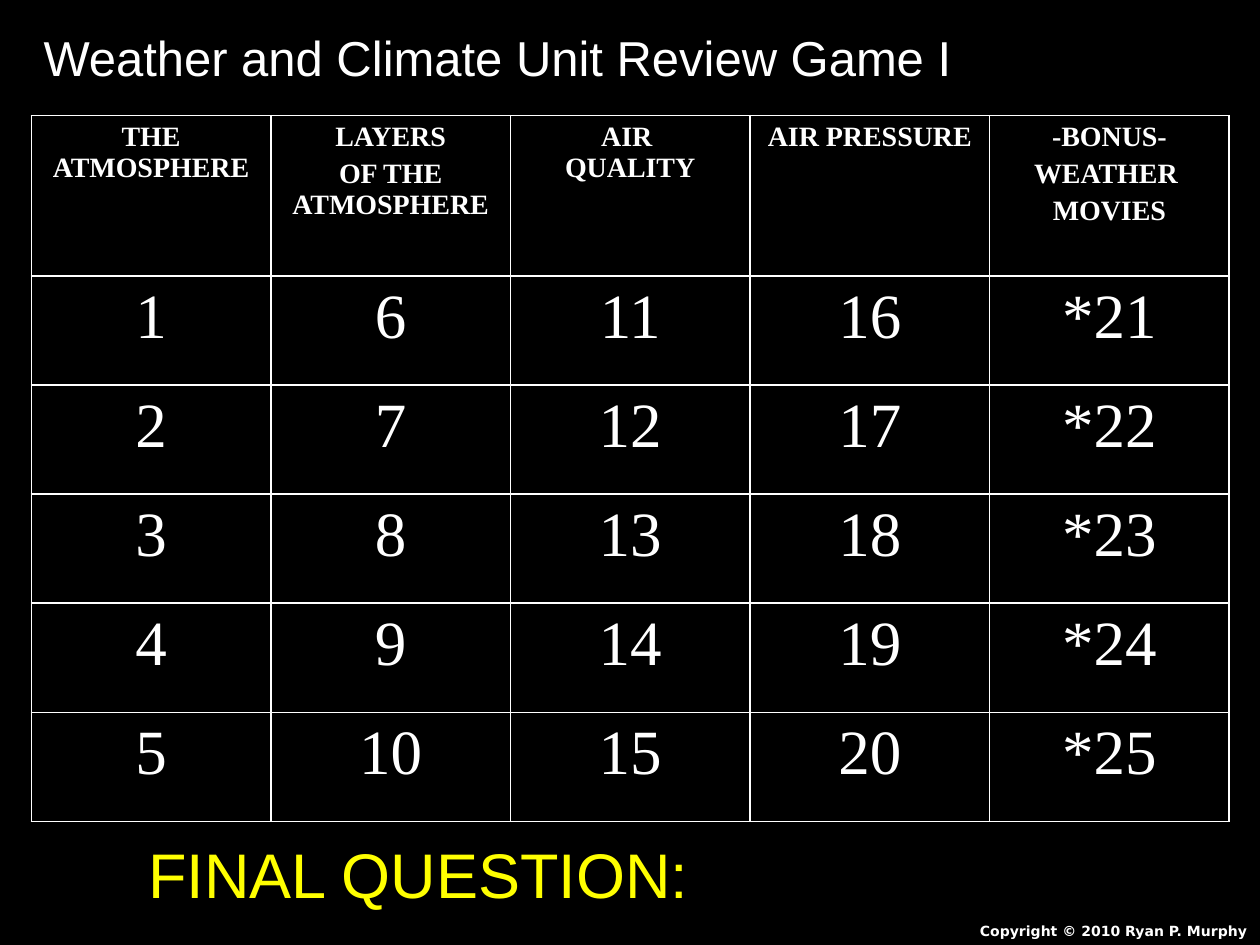
from lxml import etree
from pptx import Presentation
from pptx import util as u
from pptx.dml.color import RGBColor
from pptx.enum import text
from pptx.oxml.ns import qn

COLORS = {"black": "000000", "white": "FFFFFF", "yellow": "FFFF00"}
TOPICS = ["THE ATMOSPHERE", "LAYERS\nOF THE\vATMOSPHERE", "AIR \vQUALITY",
          "AIR PRESSURE", "-BONUS-\nWEATHER \nMOVIES"]
QUESTIONS = 5
BONUS = len(TOPICS) - 1


def rgb(name):
    return RGBColor.from_string(COLORS[name])


def style_text(tf, size, font, color="white", bold=False,
               align=text.PP_ALIGN.LEFT, before=0):
    for p in tf.paragraphs:
        p.alignment = align
        p.space_before = u.Pt(before)
        for r in p.runs:
            r.font.size = u.Pt(size)
            r.font.name = font
            r.font.bold = bold
            r.font.color.rgb = rgb(color)


def add_label(slide, words, left, top, width, height, size, font, **style):
    sp = slide.shapes.add_textbox(u.Cm(left), u.Cm(top), u.Cm(width), u.Cm(height))
    tf = sp.text_frame
    tf.word_wrap = True
    tf.text = words
    style_text(tf, size, font, **style)


def add_borders(cell):
    tc_pr = cell._tc.get_or_add_tcPr()
    for i, side in enumerate(("a:lnL", "a:lnR", "a:lnT", "a:lnB")):
        ln = etree.Element(qn(side), w=str(u.Pt(1)))
        fill = etree.SubElement(ln, qn("a:solidFill"))
        etree.SubElement(fill, qn("a:srgbClr"), val=COLORS["white"])
        tc_pr.insert(i, ln)


def fill_cell(cell, words, size, bold):
    cell.fill.background()
    cell.text_frame.text = words
    style_text(cell.text_frame, size, "Times New Roman", bold=bold,
               align=text.PP_ALIGN.CENTER, before=size * 0.2)
    add_borders(cell)


def add_board(slide):
    table = slide.shapes.add_table(
        QUESTIONS + 1, len(TOPICS),
        u.Cm(0.63), u.Cm(2.33), u.Cm(24.13), u.Cm(14.22)).table
    table.first_row = table.horz_banding = False
    for i, row in enumerate(table.rows):
        row.height = u.Cm(2.2 if i else 3.23)
    for col, topic in enumerate(TOPICS):
        table.columns[col].width = u.Cm(4.83)
        fill_cell(table.cell(0, col), topic, 16, True)
        for row in range(1, QUESTIONS + 1):
            star = "*" if col == BONUS else ""
            number = col * QUESTIONS + row
            fill_cell(table.cell(row, col), f"{star}{number}", 36, False)


def main():
    prs = Presentation()
    prs.slide_width, prs.slide_height = u.Cm(25.4), u.Cm(19.05)
    s = prs.slides.add_slide(prs.slide_layouts[6])
    s.background.fill.solid()
    s.background.fill.fore_color.rgb = rgb("black")
    add_board(s)
    add_label(s, "Copyright © 2010 Ryan P. Murphy", 17.98, 18.47, 7.42, 0.58,
              8, "DejaVu Sans", bold=True, align=text.PP_ALIGN.RIGHT)
    add_label(s, "Weather and Climate Unit Review Game I", 0.63, 0.43, 23.7, 1.45,
              28, "Arial")
    add_label(s, "FINAL QUESTION:", 2.74, 16.71, 12.07, 1.78,
              36, "Arial", color="yellow")
    prs.save("out.pptx")


if __name__ == "__main__":
    main()
